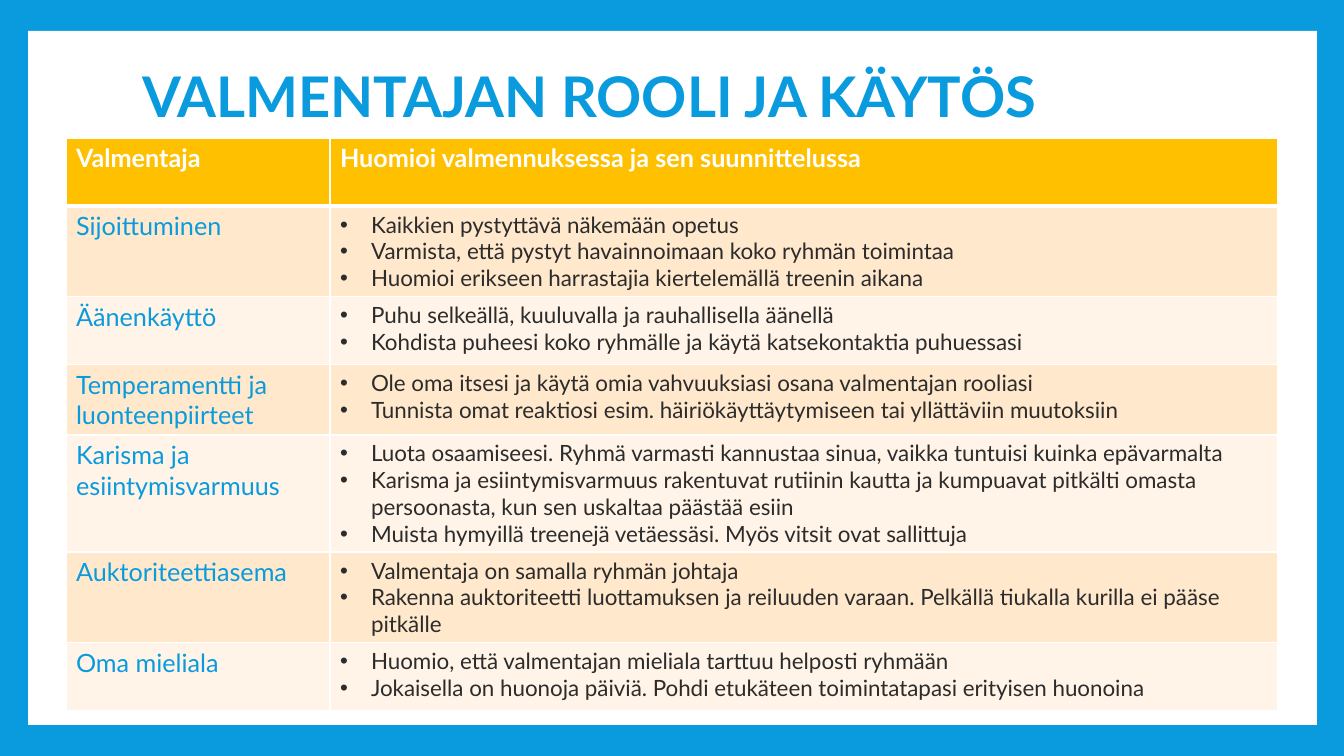
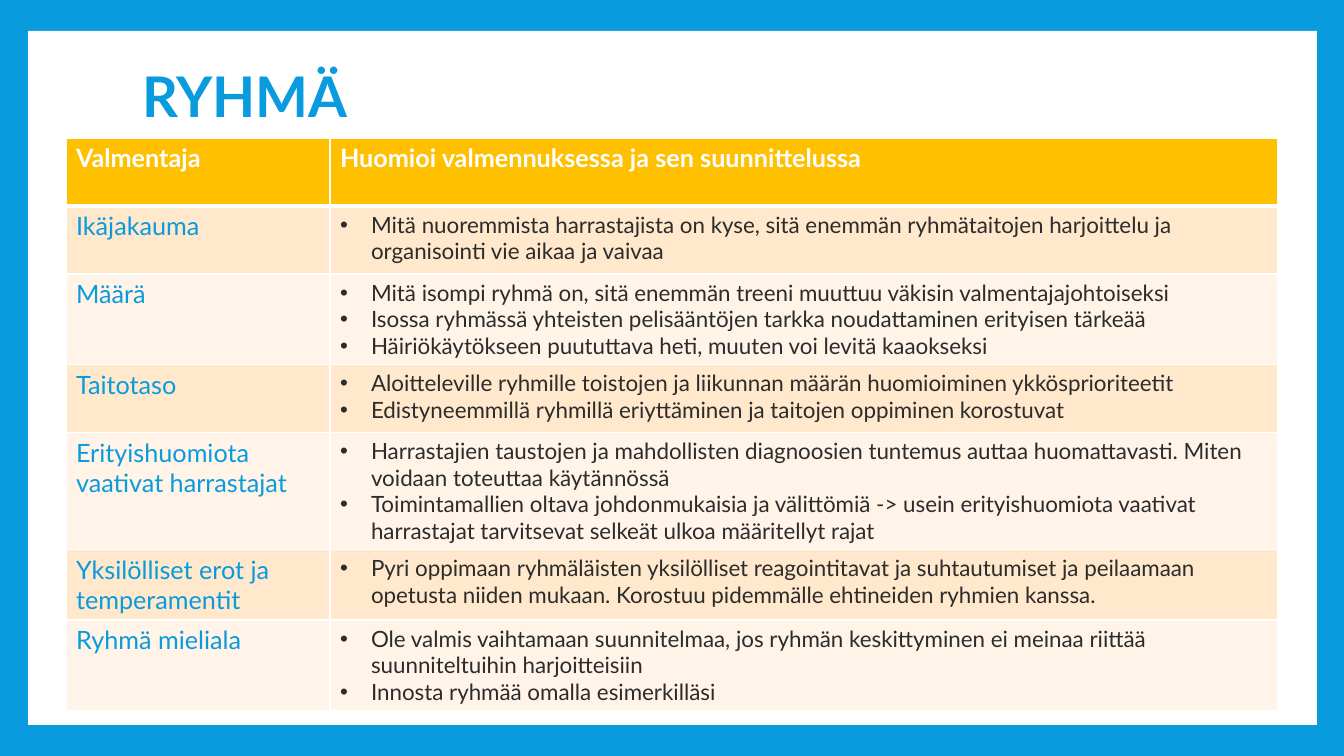
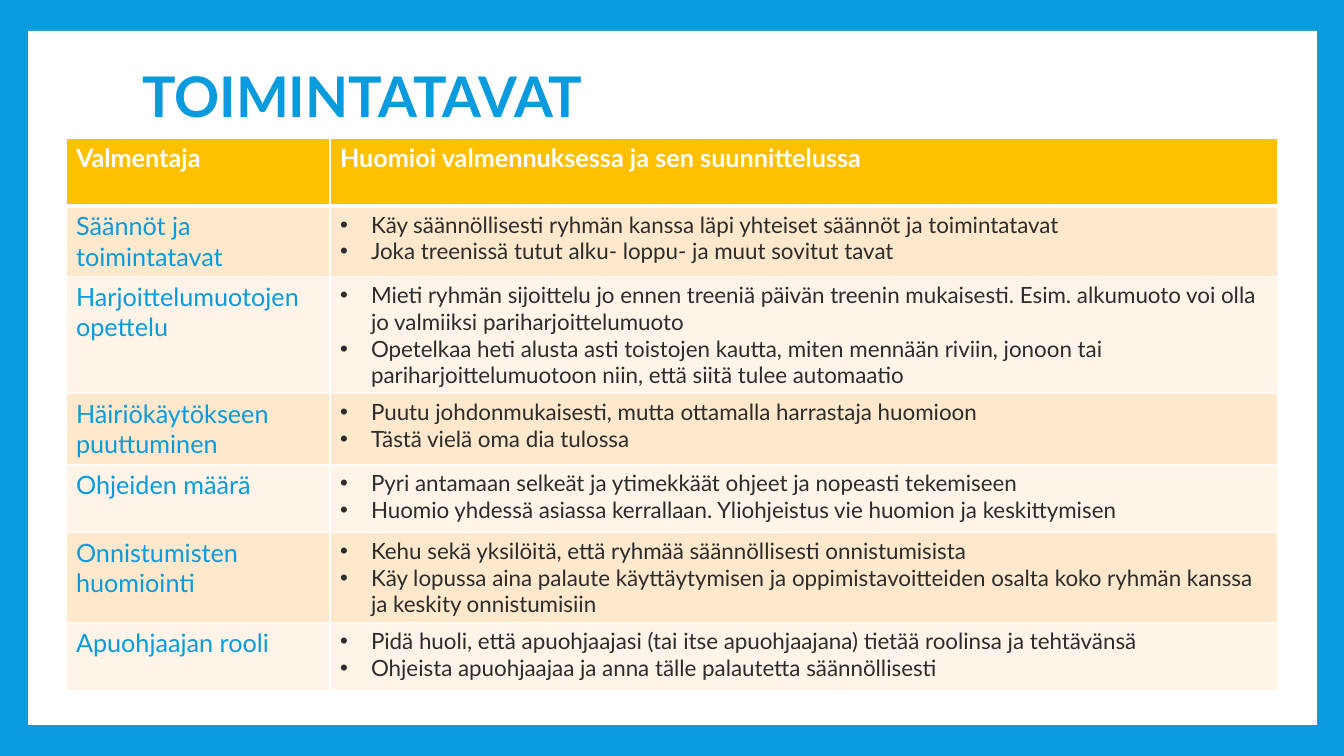
from dataclasses import dataclass

from lxml.etree import SubElement as Sub
from pptx import Presentation
from pptx.dml.color import RGBColor as Color
from pptx.enum.shapes import MSO_SHAPE as Shape
from pptx.enum.text import MSO_ANCHOR as Anchor, MSO_AUTO_SIZE as Fit, PP_ALIGN as Align
from pptx.oxml.ns import qn
from pptx.util import Pt

SCALE = 914400 / 100.8


@dataclass(frozen=True)
class Theme:
    font: str = "Lato"
    blue: str = "099BDD"
    white: str = "FFFFFF"
    gold: str = "FFC000"
    dark: str = "2C2C2C"
    bands: tuple = ("FFE8CC", "FFF4E7")
    title: int = 40
    label: int = 18
    body: int = 16
    thin: int = 1
    thick: int = 3


T = Theme()

# Geometry in px: left, top, width, height
PAGE = (1344, 756)
PANEL = (28, 31, 1289, 694)
TITLE = (132, 17, 1079, 166)
TABLE_AT = (66, 138)
COLS = (264, 948)
ROW = 68
INDENT = 31

HEAD = ("Valmentaja", "Huomioi valmennuksessa ja sen suunnittelussa")

# Each slide: title, then rows of label and bullet points
DECK = [
    ("VALMENTAJAN ROOLI JA KÄYTÖS", [
        ("Sijoittuminen", [
            "Kaikkien pystyttävä näkemään opetus",
            "Varmista, että pystyt havainnoimaan koko ryhmän toimintaa",
            "Huomioi erikseen harrastajia kiertelemällä treenin aikana"]),
        ("Äänenkäyttö", [
            "Puhu selkeällä, kuuluvalla ja rauhallisella äänellä",
            "Kohdista puheesi koko ryhmälle ja käytä katsekontaktia puhuessasi"]),
        ("Temperamentti ja luonteenpiirteet", [
            "Ole oma itsesi ja käytä omia vahvuuksiasi osana valmentajan rooliasi",
            "Tunnista omat reaktiosi esim. häiriökäyttäytymiseen tai yllättäviin muutoksiin"]),
        ("Karisma ja esiintymisvarmuus", [
            "Luota osaamiseesi. Ryhmä varmasti kannustaa sinua, vaikka tuntuisi kuinka "
            "epävarmalta",
            "Karisma ja esiintymisvarmuus rakentuvat rutiinin kautta ja kumpuavat pitkälti "
            "omasta persoonasta, kun sen uskaltaa päästää esiin",
            "Muista hymyillä treenejä vetäessäsi. Myös vitsit ovat sallittuja"]),
        ("Auktoriteettiasema", [
            "Valmentaja on samalla ryhmän johtaja",
            "Rakenna auktoriteetti luottamuksen ja reiluuden varaan. Pelkällä tiukalla "
            "kurilla ei pääse pitkälle"]),
        ("Oma mieliala", [
            "Huomio, että valmentajan mieliala tarttuu helposti ryhmään",
            "Jokaisella on huonoja päiviä. Pohdi etukäteen toimintatapasi erityisen "
            "huonoina"]),
    ]),
    ("RYHMÄ", [
        ("Ikäjakauma", [
            "Mitä nuoremmista harrastajista on kyse, sitä enemmän ryhmätaitojen harjoittelu "
            "ja organisointi vie aikaa ja vaivaa"]),
        ("Määrä", [
            "Mitä isompi ryhmä on, sitä enemmän treeni muuttuu väkisin valmentajajohtoiseksi",
            "Isossa ryhmässä yhteisten pelisääntöjen tarkka noudattaminen erityisen tärkeää",
            "Häiriökäytökseen puututtava heti, muuten voi levitä kaaokseksi"]),
        ("Taitotaso", [
            "Aloitteleville ryhmille toistojen ja liikunnan määrän huomioiminen "
            "ykkösprioriteetit",
            "Edistyneemmillä ryhmillä eriyttäminen ja taitojen oppiminen korostuvat"]),
        ("Erityishuomiota vaativat harrastajat", [
            "Harrastajien taustojen ja mahdollisten diagnoosien tuntemus auttaa "
            "huomattavasti. Miten voidaan toteuttaa käytännössä",
            "Toimintamallien oltava johdonmukaisia ja välittömiä -> usein erityishuomiota "
            "vaativat harrastajat tarvitsevat selkeät ulkoa määritellyt rajat"]),
        ("Yksilölliset erot ja temperamentit", [
            "Pyri oppimaan ryhmäläisten yksilölliset reagointitavat ja suhtautumiset ja "
            "peilaamaan opetusta niiden mukaan. Korostuu pidemmälle ehtineiden ryhmien "
            "kanssa."]),
        ("Ryhmä mieliala", [
            "Ole valmis vaihtamaan suunnitelmaa, jos ryhmän keskittyminen ei meinaa riittää "
            "suunniteltuihin harjoitteisiin",
            "Innosta ryhmää omalla esimerkilläsi"]),
    ]),
    ("TOIMINTATAVAT", [
        ("Säännöt ja toimintatavat", [
            "Käy säännöllisesti ryhmän kanssa läpi yhteiset säännöt ja toimintatavat",
            "Joka treenissä tutut alku- loppu- ja muut sovitut tavat"]),
        ("Harjoittelumuotojen opettelu", [
            "Mieti ryhmän sijoittelu jo ennen treeniä päivän treenin mukaisesti. Esim. "
            "alkumuoto voi olla jo valmiiksi pariharjoittelumuoto",
            "Opetelkaa heti alusta asti toistojen kautta, miten mennään riviin, jonoon tai "
            "pariharjoittelumuotoon niin, että siitä tulee automaatio"]),
        ("Häiriökäytökseen puuttuminen", [
            "Puutu johdonmukaisesti, mutta ottamalla harrastaja huomioon",
            "Tästä vielä oma dia tulossa"]),
        ("Ohjeiden määrä", [
            "Pyri antamaan selkeät ja ytimekkäät ohjeet ja nopeasti tekemiseen",
            "Huomio yhdessä asiassa kerrallaan. Yliohjeistus vie huomion ja keskittymisen"]),
        ("Onnistumisten huomiointi", [
            "Kehu sekä yksilöitä, että ryhmää säännöllisesti onnistumisista",
            "Käy lopussa aina palaute käyttäytymisen ja oppimistavoitteiden osalta koko "
            "ryhmän kanssa ja keskity onnistumisiin"]),
        ("Apuohjaajan rooli", [
            "Pidä huoli, että apuohjaajasi (tai itse apuohjaajana) tietää roolinsa ja "
            "tehtävänsä",
            "Ohjeista apuohjaajaa ja anna tälle palautetta säännöllisesti"]),
    ]),
]


def px(n):
    return round(n * SCALE)


def rgb(code):
    return Color.from_string(code)


def flood(fill, code):
    fill.solid()
    fill.fore_color.rgb = rgb(code)


# Text
def bullet(para):
    ppr = para._p.get_or_add_pPr()
    ppr.set("marL", str(px(INDENT)))
    ppr.set("indent", str(-px(INDENT)))
    Sub(ppr, qn("a:buFont"), typeface="Arial")
    Sub(ppr, qn("a:buChar"), char="•")


def write(frame, *lines, size=T.label, color=T.blue, bold=False, space=None, dots=False):
    for i, line in enumerate(lines):
        para = frame.add_paragraph() if i else frame.paragraphs[0]
        para.alignment = Align.LEFT
        if space:
            para.line_spacing = space
        if dots:
            bullet(para)
        run = para.add_run()
        run.text = line
        font = run.font
        font.name, font.size, font.bold = T.font, Pt(size), bold
        font.color.rgb = rgb(color)


# Table
def paint(cell, fill, top=T.thin, base=T.thin):
    tcpr = cell._tc.get_or_add_tcPr()
    for side, width in zip("LRTB", (T.thin, T.thin, top, base)):
        line = Sub(tcpr, qn(f"a:ln{side}"), w=str(Pt(width)))
        Sub(Sub(line, qn("a:solidFill")), qn("a:srgbClr"), val=T.white)
    flood(cell.fill, fill)


def grid(slide, rows):
    count = len(rows) + 1
    box = (*TABLE_AT, sum(COLS), ROW * count)
    table = slide.shapes.add_table(count, len(COLS), *map(px, box)).table
    table.horz_banding = False
    for col, width in zip(table.columns, COLS):
        col.width = px(width)
    for c, name in enumerate(HEAD):
        cell = table.cell(0, c)
        paint(cell, T.gold, base=T.thick)
        write(cell.text_frame, name, color=T.white, bold=True)
    for r, (label, points) in enumerate(rows, 1):
        left, right = table.cell(r, 0), table.cell(r, 1)
        for cell in (left, right):
            paint(cell, T.bands[(r - 1) % 2], top=T.thick if r == 1 else T.thin)
        write(left.text_frame, label)
        write(right.text_frame, *points, size=T.body, color=T.dark, dots=True)


# Shared layout: blue background, title only
def dress(layout):
    flood(layout.background.fill, T.blue)
    for spot in list(layout.placeholders)[1:]:
        layout.shapes.element.remove(spot.element)


# White panel behind the title
def panel(slide):
    sheet = slide.shapes.add_shape(Shape.RECTANGLE, *map(px, PANEL))
    sheet.shadow.inherit = False
    flood(sheet.fill, T.white)
    sheet.line.fill.background()
    slide.shapes.title.element.addprevious(sheet.element)


def head(slide, text):
    title = slide.shapes.title
    title.left, title.top, title.width, title.height = map(px, TITLE)
    frame = title.text_frame
    frame.word_wrap, frame.auto_size = True, Fit.NONE
    frame.vertical_anchor = Anchor.MIDDLE
    write(frame, text, size=T.title, bold=True, space=0.85)


def main():
    prs = Presentation()
    prs.slide_width, prs.slide_height = map(px, PAGE)
    layout = prs.slide_layouts[5]
    dress(layout)
    for name, rows in DECK:
        slide = prs.slides.add_slide(layout)
        panel(slide)
        head(slide, name)
        grid(slide, rows)
    prs.save("out.pptx")


if __name__ == "__main__":
    main()
